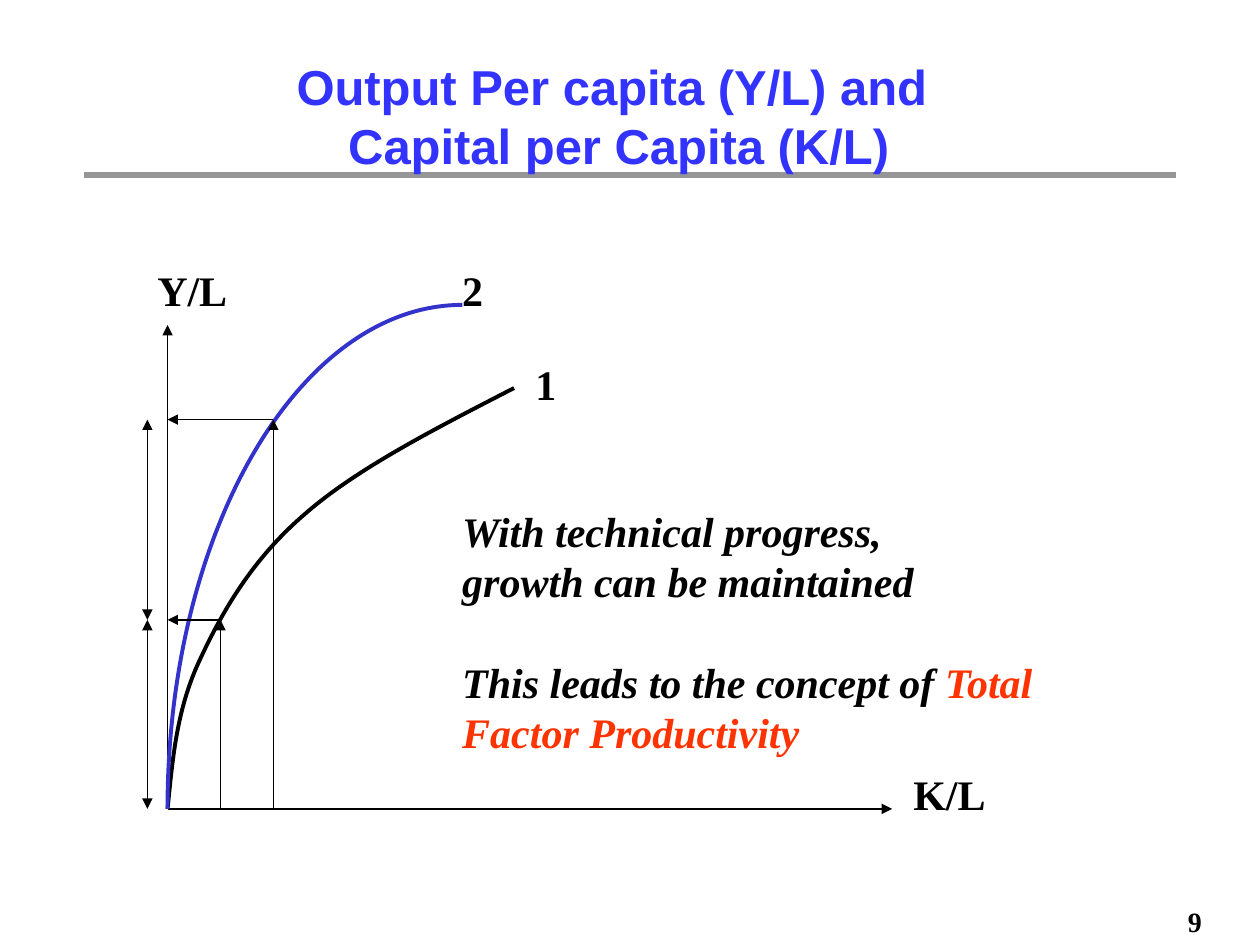
import pptx
import pptx.util
import pptx.dml.color
import pptx.enum.shapes
import pptx.enum.text
import lxml.etree

Inches, Pt = pptx.util.Inches, pptx.util.Pt
color = pptx.dml.color.RGBColor.from_string
Align = pptx.enum.text.PP_ALIGN
Anchor = pptx.enum.text.MSO_ANCHOR
SERIF, BLACK, RED, BLUE = "Times New Roman", "000000", "FF3300", "3333FF"
SPACE = "{http://schemas.openxmlformats.org/drawingml/2006/main}"

deck = pptx.Presentation()
deck.slide_width, deck.slide_height = Inches(10), Inches(7.5)
slide = deck.slides.add_slide(deck.slide_layouts[6])


def draw_line(start, end, ends=(), hue=BLACK, width=0.75):
    """Straight line; ends lists headEnd and/or tailEnd for arrowheads."""
    line = slide.shapes.add_connector(
        pptx.enum.shapes.MSO_CONNECTOR.STRAIGHT,
        *[Inches(v) for v in (*start, *end)])
    line.line.color.rgb = color(hue)
    line.line.width = Pt(width)
    for tag in ends:
        lxml.etree.SubElement(line.line._ln, SPACE + tag, type="triangle")
    lxml.etree.SubElement(line._element.spPr, SPACE + "effectLst")


def add_text(place, paras, size=24, font=SERIF, wrap=False, slant=False):
    """Bold text box; each paragraph is a list of (text, colour) runs, None a line break."""
    box = slide.shapes.add_textbox(*[Inches(v) for v in place])
    frame = box.text_frame
    frame.word_wrap = wrap
    for i, runs in enumerate(paras):
        para = frame.paragraphs[0] if i == 0 else frame.add_paragraph()
        para.line_spacing = Pt(1.2 * size)
        for part in runs:
            if part is None:
                para.add_line_break()
                continue
            run = para.add_run()
            run.text = part[0]
            run.font.size, run.font.name = Pt(size), font
            run.font.bold, run.font.italic = True, slant
            run.font.color.rgb = color(part[1])
    return frame


# Rule and page number
draw_line((0.67, 1.39), (9.33, 1.39), hue="969696", width=3)
add_text((9.33, 7.13, 0.46, 0.37), [[("9", BLACK)]], size=16)

# Title
title = add_text(
    (0.65, 0.45, 8.52, 0.93),
    [[("Output Per capita (Y/L) and ", BLUE), None, ("Capital per Capita (K/L)", BLUE)]],
    size=28, font="Arial", wrap=True)
title.vertical_anchor = Anchor.MIDDLE
title.paragraphs[0].alignment = Align.CENTER

# Axes
left, base = 1.33, 6.42
draw_line((left, base), (left, 2.58), ["tailEnd"])
draw_line((left, base), (7.08, base), ["tailEnd"])

# Output curves: a start point, then three points for each Bezier segment
curves = [
    (BLACK, (left, base), [
        (1.37, 6.03), (1.4, 5.64), (1.58, 5.25),
        (1.76, 4.86), (2, 4.44), (2.42, 4.08),
        (2.83, 3.72), (3.46, 3.4), (4.08, 3.08)]),
    ("3333CC", (3.67, 2.42), [(2.38, 2.42), (left, 4.21), (left, base)]),
]
for hue, start, points in curves:
    pen = slide.shapes.build_freeform(Inches(start[0]), Inches(start[1]))
    pen.add_line_segments([(Inches(x), Inches(y)) for x, y in points], close=False)
    curve = pen.convert_to_shape()
    # Turn every three straight steps into one Bezier step
    steps = list(curve._element.iter(SPACE + "lnTo"))
    for n in range(0, len(steps), 3):
        bend = lxml.etree.SubElement(steps[n].getparent(), SPACE + "cubicBezTo")
        for step in steps[n:n + 3]:
            bend.append(step[0])
            step.getparent().remove(step)
    curve.shadow.inherit = False
    curve.fill.background()
    curve.line.color.rgb = color(hue)
    curve.line.width = Pt(2.25)

# Guides from each capital level to its output, with the gain beside the axis
low = base
for x, y in [(1.75, 4.92), (2.17, 3.33)]:
    draw_line((x, base), (x, y), ["tailEnd"])
    draw_line((x, y), (left, y), ["tailEnd"])
    draw_line((1.17, low), (1.17, y), ["headEnd", "tailEnd"])
    low = y

# Axis and curve labels
for text, place in [("Y/L", (1.15, 2.05, 0.76, 0.51)),
                    ("K/L", (7.15, 6.05, 0.78, 0.51)),
                    ("1", (4.15, 2.8, 0.37, 0.5)),
                    ("2", (3.57, 2.05, 0.37, 0.5))]:
    add_text(place, [[(text, BLACK)]])

# Conclusion
note = add_text((3.57, 3.96, 5.19, 2.12), [
    [("With technical progress,", BLACK)],
    [("growth can be maintained", BLACK)],
    [("This leads to the concept of ", BLACK), ("Total Factor Productivity", RED)],
], wrap=True, slant=True)
note.paragraphs[2].space_before = Pt(28.8)

deck.save("out.pptx")
